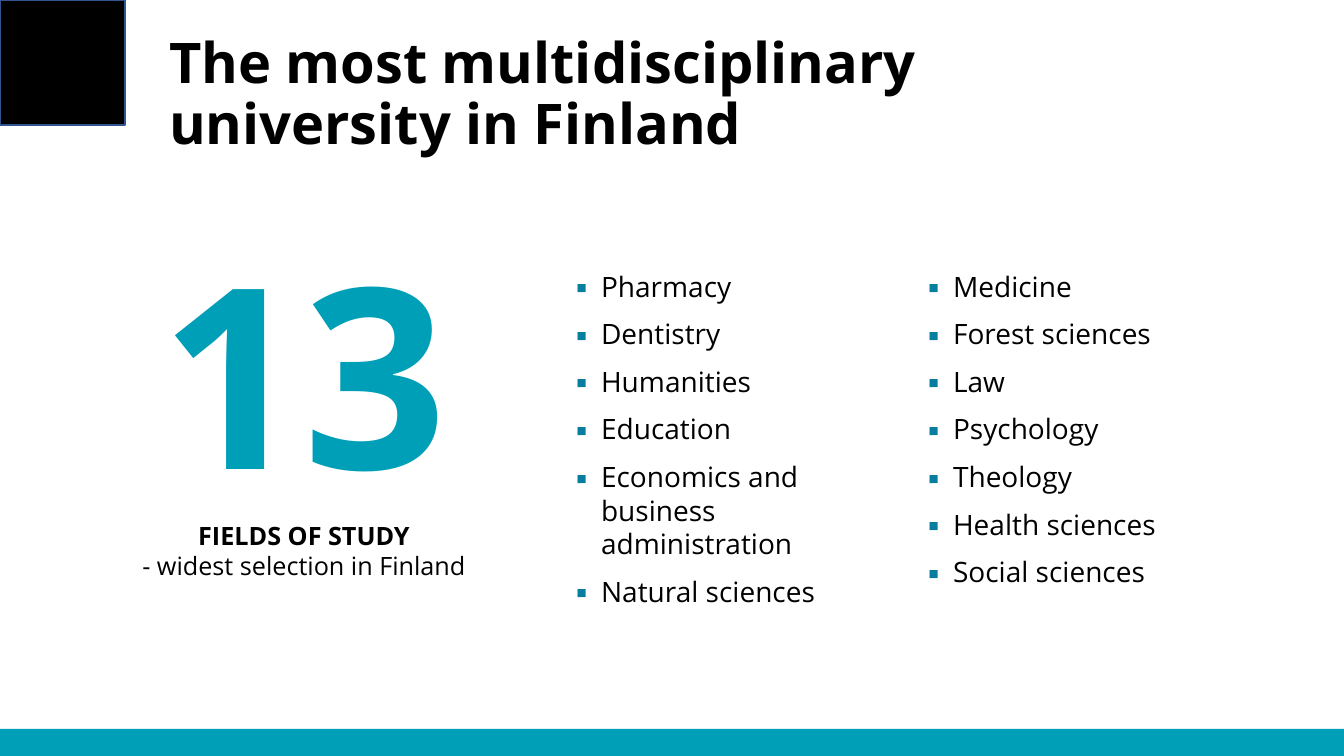
from dataclasses import dataclass
from typing import Optional

import lxml.etree
import pptx
import pptx.dml.color
import pptx.enum.shapes
import pptx.enum.text
import pptx.oxml.ns
import pptx.util

EMU_PER_PX = 914400 / 100.8
SLIDE_WIDTH, SLIDE_HEIGHT = 1344, 756
TWO_CONTENT_LAYOUT = 3


@dataclass(frozen=True)
class Theme:
    font: str = "Open Sans"
    black: str = "000000"
    teal: str = "009FB8"
    bullet: str = "077E9E"
    outline: str = "325491"
    title_size: int = 40
    list_size: int = 20
    figure_size: int = 180
    caption_size: int = 18
    title_spacing: float = 0.9
    item_gap: int = 10
    indent: int = 25


@dataclass(frozen=True)
class Box:
    left: int
    top: int
    width: int
    height: int


@dataclass(frozen=True)
class Block:
    box: Box
    fill: str
    line: Optional[str] = None


@dataclass(frozen=True)
class FieldList:
    placeholder: int
    box: Box
    fields: tuple[str, ...]


@dataclass(frozen=True)
class Line:
    text: str
    size: int
    color: str
    bold: bool
    spacing: float = 1.0


THEME = Theme()
TITLE = Line(
    "The most multidisciplinary university in Finland",
    THEME.title_size, THEME.black, True, THEME.title_spacing,
)
TITLE_BOX = Box(159, 68, 1035, 56)
BLOCKS = (
    Block(Box(0, 0, 125, 125), THEME.black, THEME.outline),
    Block(Box(0, 729, SLIDE_WIDTH, 27), THEME.teal),
)
FIELD_LISTS = (
    FieldList(1, Box(566, 264, 324, 326), (
        "Pharmacy", "Dentistry", "Humanities", "Education",
        "Economics and business administration", "Natural sciences",
    )),
    FieldList(2, Box(918, 264, 389, 359), (
        "Medicine", "Forest sciences", "Law", "Psychology",
        "Theology", "Health sciences", "Social sciences",
    )),
)
FIGURE_BOX = Box(125, 213, 358, 377)
FIGURE_LINES = (
    Line("13", THEME.figure_size, THEME.teal, True),
    Line("FIELDS OF STUDY", THEME.caption_size, THEME.black, True),
    Line("- widest selection in Finland", THEME.caption_size, THEME.black, False),
)


def px(length: int) -> pptx.util.Emu:
    return pptx.util.Emu(round(length * EMU_PER_PX))


def rgb(color: str) -> pptx.dml.color.RGBColor:
    return pptx.dml.color.RGBColor.from_string(color)


def edges(box: Box) -> tuple[pptx.util.Emu, ...]:
    return px(box.left), px(box.top), px(box.width), px(box.height)


def place(shape, box: Box) -> None:
    shape.left, shape.top, shape.width, shape.height = edges(box)


def set_line(paragraph, line: Line, alignment: pptx.enum.text.PP_ALIGN) -> None:
    paragraph.text = line.text
    paragraph.alignment = alignment
    paragraph.line_spacing = line.spacing
    for run in paragraph.runs:
        run.font.name = THEME.font
        run.font.size = pptx.util.Pt(line.size)
        run.font.bold = line.bold
        run.font.color.rgb = rgb(line.color)


def add_bullet(paragraph) -> None:
    qn = pptx.oxml.ns.qn
    properties = paragraph._p.get_or_add_pPr()
    properties.set("marL", str(px(THEME.indent)))
    properties.set("indent", str(-px(THEME.indent)))
    color = lxml.etree.SubElement(properties, qn("a:buClr"))
    lxml.etree.SubElement(color, qn("a:srgbClr"), val=THEME.bullet)
    lxml.etree.SubElement(properties, qn("a:buFont"), typeface=THEME.font)
    lxml.etree.SubElement(properties, qn("a:buChar"), char="▪")


def draw_title(slide) -> None:
    title = slide.shapes.title
    place(title, TITLE_BOX)
    frame = title.text_frame
    frame.auto_size = pptx.enum.text.MSO_AUTO_SIZE.NONE
    frame.vertical_anchor = pptx.enum.text.MSO_ANCHOR.MIDDLE
    set_line(frame.paragraphs[0], TITLE, pptx.enum.text.PP_ALIGN.LEFT)


def draw_block(slide, block: Block) -> None:
    shape = slide.shapes.add_shape(pptx.enum.shapes.MSO_SHAPE.RECTANGLE, *edges(block.box))
    shape.shadow.inherit = False
    shape.fill.solid()
    shape.fill.fore_color.rgb = rgb(block.fill)
    if block.line:
        shape.line.color.rgb = rgb(block.line)
        shape.line.width = pptx.util.Pt(1)
    else:
        shape.line.fill.background()


def draw_field_list(slide, field_list: FieldList) -> None:
    body = slide.placeholders[field_list.placeholder]
    place(body, field_list.box)
    frame = body.text_frame
    frame.auto_size = pptx.enum.text.MSO_AUTO_SIZE.NONE
    frame.text = "\n".join(field_list.fields)
    for index, paragraph in enumerate(frame.paragraphs):
        add_bullet(paragraph)
        line = Line(field_list.fields[index], THEME.list_size, THEME.black, False)
        set_line(paragraph, line, pptx.enum.text.PP_ALIGN.LEFT)
        paragraph.space_before = pptx.util.Pt(THEME.item_gap if index else 0)


def draw_figure(slide) -> None:
    frame = slide.shapes.add_textbox(*edges(FIGURE_BOX)).text_frame
    frame.word_wrap = True
    frame.text = "\n".join(line.text for line in FIGURE_LINES)
    for paragraph, line in zip(frame.paragraphs, FIGURE_LINES):
        set_line(paragraph, line, pptx.enum.text.PP_ALIGN.CENTER)


def main() -> None:
    presentation = pptx.Presentation()
    presentation.slide_width = px(SLIDE_WIDTH)
    presentation.slide_height = px(SLIDE_HEIGHT)
    slide = presentation.slides.add_slide(presentation.slide_layouts[TWO_CONTENT_LAYOUT])
    draw_title(slide)
    for block in BLOCKS:
        draw_block(slide, block)
    for field_list in FIELD_LISTS:
        draw_field_list(slide, field_list)
    draw_figure(slide)
    presentation.save("out.pptx")


if __name__ == "__main__":
    main()
